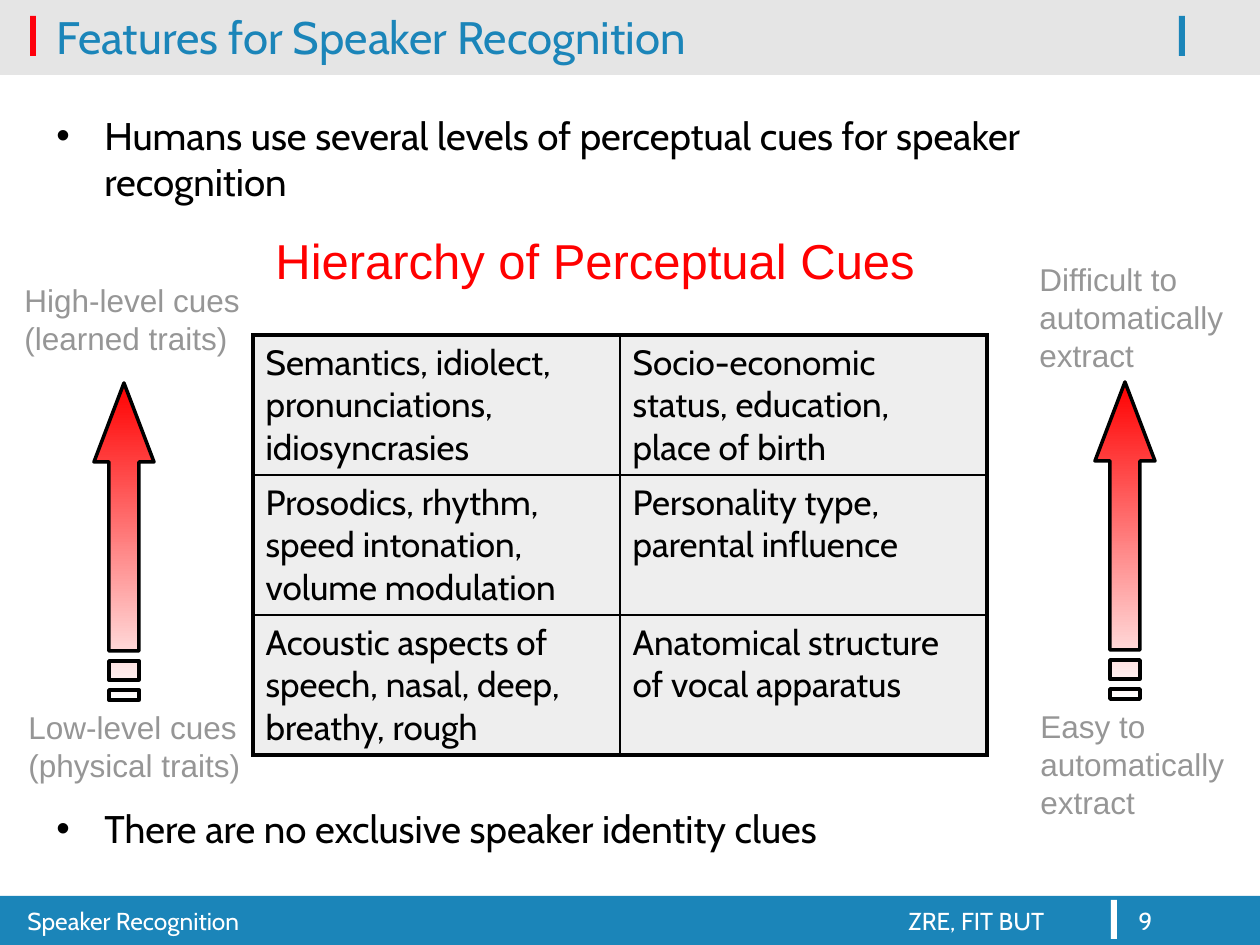
from lxml import etree
from pptx import Presentation
from pptx import util as u
from pptx.dml.color import RGBColor
from pptx.enum import shapes, text
from pptx.oxml import ns

SCALE = 914400 / 126  # EMU per px
BLACK = RGBColor(0x00, 0x00, 0x00)
WHITE = RGBColor(0xFF, 0xFF, 0xFF)
BLUE = RGBColor(0x1B, 0x85, 0xB9)
BAR_RED = RGBColor(0xFE, 0x00, 0x0C)
RED = RGBColor(0xFF, 0x00, 0x00)
BAND_GREY = RGBColor(0xE5, 0xE5, 0xE5)
CELL_GREY = RGBColor(0xEE, 0xEE, 0xEE)
LABEL_GREY = RGBColor(0x96, 0x96, 0x96)


def px(value):
    return u.Emu(round(value * SCALE))


def add_text(box, lines, size, color, font="Cabin", wrap=True, spacing=None):
    area = slide.shapes.add_textbox(*map(px, box))
    frame = area.text_frame
    frame.word_wrap = wrap
    frame.text = "\n".join(lines)
    for paragraph in frame.paragraphs:
        paragraph.line_spacing = spacing
        paragraph.font.name = font
        paragraph.font.size = u.Pt(size)
        paragraph.font.color.rgb = color
    return frame


prs = Presentation()
prs.slide_width, prs.slide_height = px(1260), px(945)
slide = prs.slides.add_slide(prs.slide_layouts[6])

# Header and footer bands with their accent bars
for box, color in [
    ((0, 71, 1260, 4), BAND_GREY),
    ((0, 896, 1260, 49), BLUE),
    ((0, 0, 1260, 71), BAND_GREY),
    ((30, 16, 6, 40), BAR_RED),
    ((1179, 16, 6, 40), BLUE),
    ((1111, 900, 6, 39), WHITE),
]:
    band = slide.shapes.add_shape(shapes.MSO_SHAPE.RECTANGLE, *map(px, box))
    band.shadow.inherit = False
    band.fill.solid()
    band.fill.fore_color.rgb = color
    band.line.fill.background()

# Footer text
for left, width, words in [
    (15, 400, "Speaker Recognition"),
    (896, 200, "ZRE, FIT BUT"),
    (1126, 113, "9"),
]:
    add_text((left, 900, width, 45), [words], 14, WHITE)

# Title
title = add_text((44, -14, 1121, 100), ["Features for Speaker Recognition"], 26, BLUE)
title.vertical_anchor = text.MSO_ANCHOR.MIDDLE

# Bulleted statements
for top, height, words in [
    (106, 105, "Humans use several levels of perceptual cues for speaker recognition"),
    (799, 60, "There are no exclusive speaker identity clues"),
]:
    statement = add_text((44, top, 1171, height), [words], 22, BLACK)
    properties = statement.paragraphs[0]._p.get_or_add_pPr()
    properties.set("marL", str(px(48)))
    properties.set("indent", str(px(-48)))
    bullet_font = etree.SubElement(properties, ns.qn("a:buFont"))
    bullet_font.set("typeface", "Arial")
    etree.SubElement(properties, ns.qn("a:buChar")).set("char", "•")
    # Bullet elements come before the default run properties
    properties.append(properties.find(ns.qn("a:defRPr")))

# Table of cues
cues = [
    ("Semantics, idiolect, pronunciations, idiosyncrasies",
     "Socio-economic status, education, place of birth"),
    ("Prosodics, rhythm, speed intonation, volume modulation",
     "Personality type, parental influence"),
    ("Acoustic aspects of speech, nasal, deep, breathy, rough",
     "Anatomical structure of vocal apparatus"),
]
table = slide.shapes.add_table(3, 2, px(253), px(335), px(734), px(420)).table
for row in table.rows:
    row.height = px(140)
for r, row_cues in enumerate(cues):
    for c, words in enumerate(row_cues):
        cell = table.cell(r, c)
        cell.text = words
        paragraph = cell.text_frame.paragraphs[0]
        paragraph.font.name = "Cabin"
        paragraph.font.size = u.Pt(20)
        paragraph.font.bold = False
        paragraph.font.color.rgb = BLACK
        cell_properties = cell._tc.get_or_add_tcPr()
        outer_sides = {"L": c == 0, "R": c == 1, "T": r == 0, "B": r == 2}
        for side, outer in outer_sides.items():
            border = etree.SubElement(cell_properties, ns.qn(f"a:ln{side}"))
            border.set("w", str(u.Pt(2.25 if outer else 1)))
            border_fill = etree.SubElement(border, ns.qn("a:solidFill"))
            etree.SubElement(border_fill, ns.qn("a:srgbClr")).set("val", str(BLACK))
        cell.fill.solid()
        cell.fill.fore_color.rgb = CELL_GREY

# Striped arrows pointing up
for center, top in [(124, 383), (1125, 382)]:
    head = [(0, 0), (30, 79), (15, 79), (15, 268), (-15, 268), (-15, 79), (-30, 79)]
    stripes = [[(-15, a), (15, a), (15, b), (-15, b)] for a, b in [(278, 297), (307, 317)]]
    builder = slide.shapes.build_freeform(center, top, scale=SCALE)
    for outline in [head, *stripes]:
        points = [(center + x, top + y) for x, y in outline]
        if outline is not head:
            builder.move_to(*points[0])
        builder.add_line_segments(points[1:], close=True)
    arrow = builder.convert_to_shape()
    arrow.shadow.inherit = False
    arrow.fill.gradient()
    arrow.fill.gradient_angle = 90
    for stop, color, position in zip(arrow.fill.gradient_stops, (WHITE, RED), (0, 1)):
        stop.color.rgb = color
        stop.position = position
    arrow.line.color.rgb = BLACK
    arrow.line.width = u.Pt(2)

# Heading and labels at the arrow ends
add_text((263, 224, 714, 72), ["Hierarchy of Perceptual Cues"], 28, RED, "Arial",
         spacing=u.Pt(33.6))
for box, lines in [
    ((12, 275, 241, 88), ["High-level cues", "(learned traits)"]),
    ((16, 702, 237, 88), ["Low-level cues", "(physical traits)"]),
    ((1027, 254, 209, 126), ["Difficult to", "automatically", "extract"]),
    ((1028, 701, 218, 126), ["Easy to", "automatically", "extract"]),
]:
    add_text(box, lines, 18, LABEL_GREY, "Arial", wrap=False, spacing=u.Pt(21.6))

prs.save("out.pptx")
